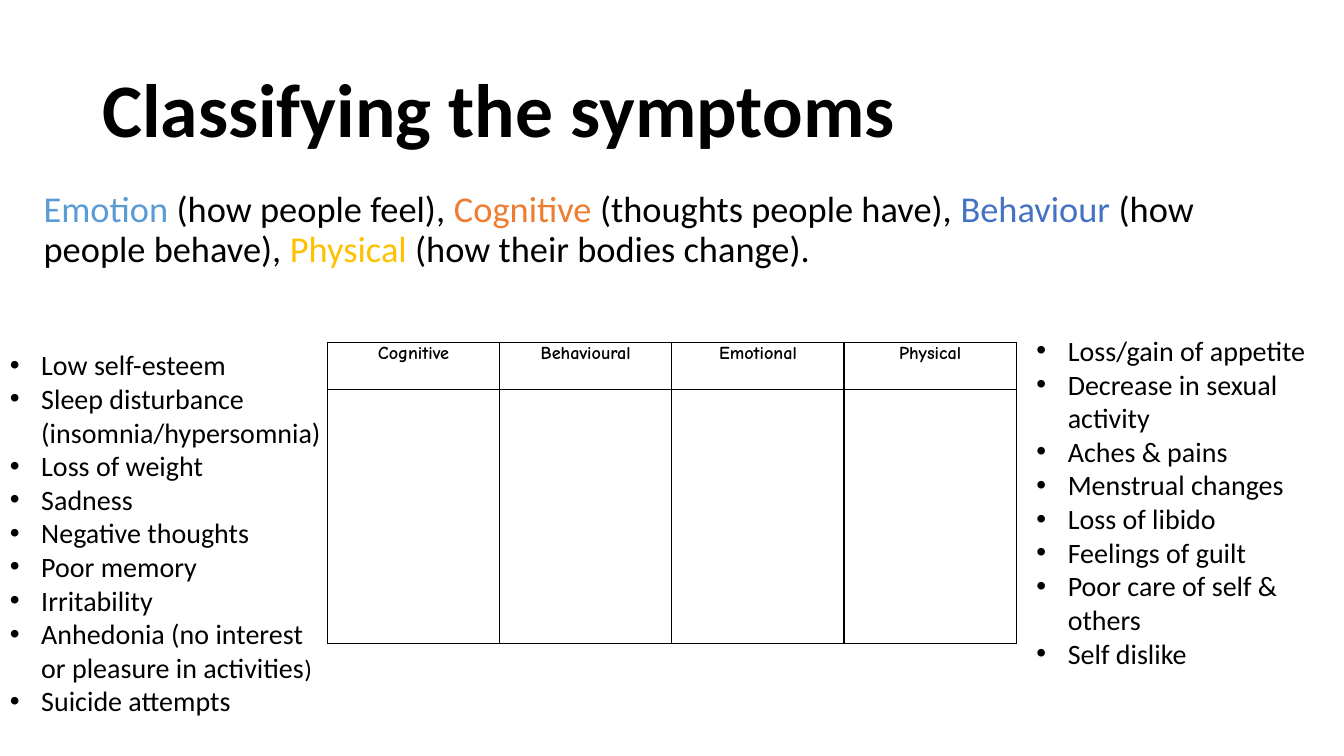
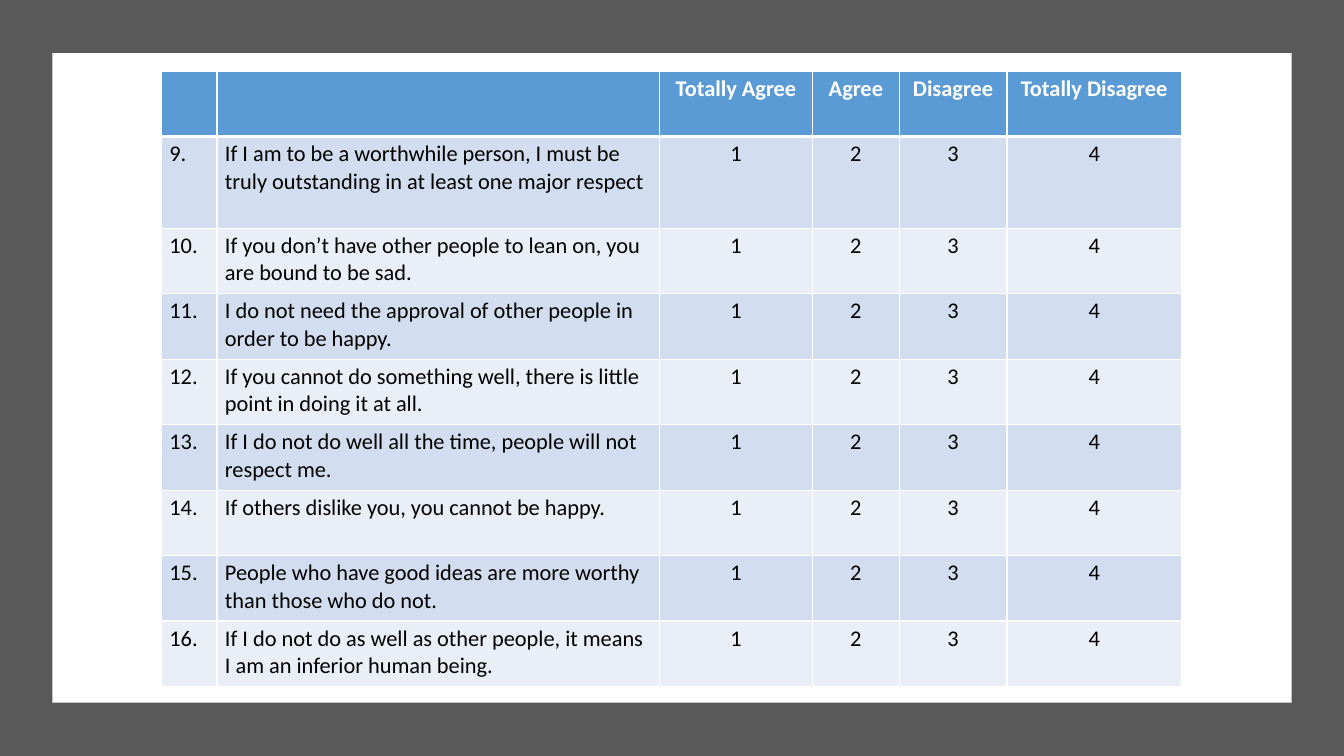
from dataclasses import dataclass
from pptx import Presentation
from pptx.dml.color import RGBColor
from pptx.enum.shapes import MSO_SHAPE
from pptx.enum.text import MSO_ANCHOR, PP_ALIGN
from pptx.oxml import parse_xml
from pptx.oxml.ns import nsdecls
from pptx.util import Cm, Pt


@dataclass(frozen=True)
class Theme:
    font: str = "Calibri"
    hand: str = "Comic Neue"
    black: str = "000000"
    white: str = "FFFFFF"
    gray: str = "595959"
    sky: str = "5B9BD5"
    orange: str = "ED7D31"
    blue: str = "4472C4"
    gold: str = "FFC000"
    bands: tuple = ("D2DEEF", "EAEFF7")
    title: int = 54
    body: int = 26
    list: int = 20
    small: int = 18
    grid: int = 16
    head: int = 13


@dataclass(frozen=True)
class Box:
    x: float
    y: float
    w: float
    h: float

    def inset(self, dx, dy):
        return Box(self.x + dx, self.y + dy, self.w - 2 * dx, self.h - 2 * dy)

    def within(self, x, y, w, h):
        return Box(self.x + x, self.y + y, w, h)

    def place(self):
        return Cm(self.x), Cm(self.y), Cm(self.w), Cm(self.h)


T = Theme()
PAGE = Box(0, 0, 33.87, 19.05)

LEFT = [
    "Low self-esteem",
    "Sleep disturbance (insomnia/hypersomnia)",
    "Loss of weight",
    "Sadness",
    "Negative thoughts",
    "Poor memory",
    "Irritability",
    [("Anhedonia (no interest or pleasure in activities", {}),
     (")", {"size": T.small})],
    "Suicide attempts",
]
RIGHT = [
    "Loss/gain of appetite",
    "Decrease in sexual activity",
    "Aches & pains",
    "Menstrual changes",
    "Loss of libido",
    "Feelings of guilt",
    "Poor care of self & others",
    "Self dislike",
]
INTRO = [
    ("Emotion", {"color": T.sky}), (" (how people feel), ", {}),
    ("Cognitive ", {"color": T.orange}), ("(thoughts people have), ", {}),
    ("Behaviour ", {"color": T.blue}), ("(how people behave), ", {}),
    ("Physical ", {"color": T.gold}), ("(how their bodies change).", {}),
]
KINDS = ["Cognitive", "Behavioural", "Emotional", "Physical"]
SCALE = ["Totally Agree", "Agree", "Disagree", "Totally Disagree"]
FIRST = 9
BELIEFS = [
    "If I am to be a worthwhile person, I must be truly outstanding in at least one major respect",
    "If you don’t have other people to lean on, you are bound to be sad.",
    "I do not need the approval of other people in order to be happy.",
    "If you cannot do something well, there is little point in doing it at all.",
    "If I do not do well all the time, people will not respect me.",
    "If others dislike you, you cannot be happy.",
    "People who have good ideas are more worthy than those who do not.",
    "If I do not do as well as other people, it means I am an inferior human being.",
]


def write(frame, paras, size=T.list, color=T.black, font=T.font, bold=False,
          align=PP_ALIGN.LEFT, space=None, bullet=False):
    frame.word_wrap = True
    for i, para in enumerate(paras):
        p = frame.paragraphs[0] if i == 0 else frame.add_paragraph()
        p.alignment = align
        if space:
            p.line_spacing = space
        if bullet:
            props = p._p.get_or_add_pPr()
            props.set("marL", str(Cm(0.79)))
            props.set("indent", str(-Cm(0.79)))
            props.append(parse_xml(f'<a:buFont {nsdecls("a")} typeface="Arial"/>'))
            props.append(parse_xml(f'<a:buChar {nsdecls("a")} char="•"/>'))
        for words, own in [(para, {})] if isinstance(para, str) else para:
            run = p.add_run()
            run.text = words
            run.font.name = font
            run.font.bold = bold
            run.font.size = Pt(own.get("size", size))
            run.font.color.rgb = RGBColor.from_string(own.get("color", color))


def label(slide, box, paras, anchor=MSO_ANCHOR.TOP, **style):
    frame = slide.shapes.add_textbox(*box.place()).text_frame
    frame.vertical_anchor = anchor
    write(frame, paras, **style)


def panel(slide, box, color):
    shape = slide.shapes.add_shape(MSO_SHAPE.RECTANGLE, *box.place())
    shape.shadow.inherit = False
    shape.fill.solid()
    shape.fill.fore_color.rgb = RGBColor.from_string(color)
    shape.line.fill.background()


def grid(slide, box, cols, rows):
    table = slide.shapes.add_table(len(rows), len(cols), *box.place()).table
    table.horz_banding = False
    for col, width in zip(table.columns, cols):
        col.width = Cm(width)
    for row, height in zip(table.rows, rows):
        row.height = Cm(height)
    return table


def dress(cell, color, fill=None, pad=(0.2, 0.1), top=1, bottom=1):
    props = cell._tc.get_or_add_tcPr()
    for side, width in zip("LRTB", (1, 1, top, bottom)):
        props.append(parse_xml(
            f'<a:ln{side} {nsdecls("a")} w="{Pt(width)}"><a:solidFill>'
            f'<a:srgbClr val="{color}"/></a:solidFill></a:ln{side}>'))
    if fill:
        cell.fill.solid()
        cell.fill.fore_color.rgb = RGBColor.from_string(fill)
    else:
        cell.fill.background()
    cell.margin_left = cell.margin_right = Cm(pad[0])
    cell.margin_top = cell.margin_bottom = Cm(pad[1])


def sorter(slide, box):
    head = 1.17
    cols = [box.w / len(KINDS)] * len(KINDS)
    table = grid(slide, box, cols, [head, box.h - head])
    for cell in table.iter_cells():
        dress(cell, T.black, pad=(0.18, 0))
    for i, kind in enumerate(KINDS):
        write(table.cell(0, i).text_frame, [kind], size=T.head, font=T.hand,
              bold=True, align=PP_ALIGN.CENTER)


def survey(slide, box):
    cols = [1.4, 11.15, 3.86, 2.18, 2.72, 4.39]
    rows = [1.65, 2.31] + [1.65] * (len(BELIEFS) - 1)
    table = grid(slide, box, cols, rows)
    marks = [str(n + 1) for n in range(len(SCALE))]
    lines = [["", ""] + SCALE]
    lines += [[f"{n}.", belief] + marks for n, belief in enumerate(BELIEFS, FIRST)]
    for r, line in enumerate(lines):
        head = r == 0
        fill = T.sky if head else T.bands[(r - 1) % 2]
        for c, words in enumerate(line):
            cell = table.cell(r, c)
            dress(cell, T.white, fill, top=3 if r == 1 else 1, bottom=3 if head else 1)
            if words:
                write(cell.text_frame, [words], size=T.grid, bold=head,
                      color=T.white if head else T.black,
                      align=PP_ALIGN.CENTER if c > 1 else PP_ALIGN.LEFT)


def symptoms(slide, box):
    label(slide, box.within(2.33, 1.02, 29.21, 3.68), ["Classifying the symptoms"],
          anchor=MSO_ANCHOR.MIDDLE, size=T.title, bold=True, space=0.9)
    label(slide, box.within(0.85, 4.7, 32.17, 14), [INTRO], size=T.body, space=0.9)
    sorter(slide, box.within(8.25, 8.64, 17.36, 7.57))
    label(slide, box.within(0, 8.64, 8.59, 10.41), LEFT, bullet=True)
    label(slide, box.within(25.87, 8.28, 7.77, 8.81), RIGHT, bullet=True)


def beliefs(slide, box):
    panel(slide, box, T.gray)
    panel(slide, box.inset(1.32, 1.34), T.white)
    survey(slide, box.within(4.07, 1.79, 25.7, 15.51))


def main():
    deck = Presentation()
    deck.slide_width, deck.slide_height = Cm(PAGE.w), Cm(PAGE.h)
    for build in (symptoms, beliefs):
        build(deck.slides.add_slide(deck.slide_layouts[6]), PAGE)
    deck.save("out.pptx")


if __name__ == "__main__":
    main()
